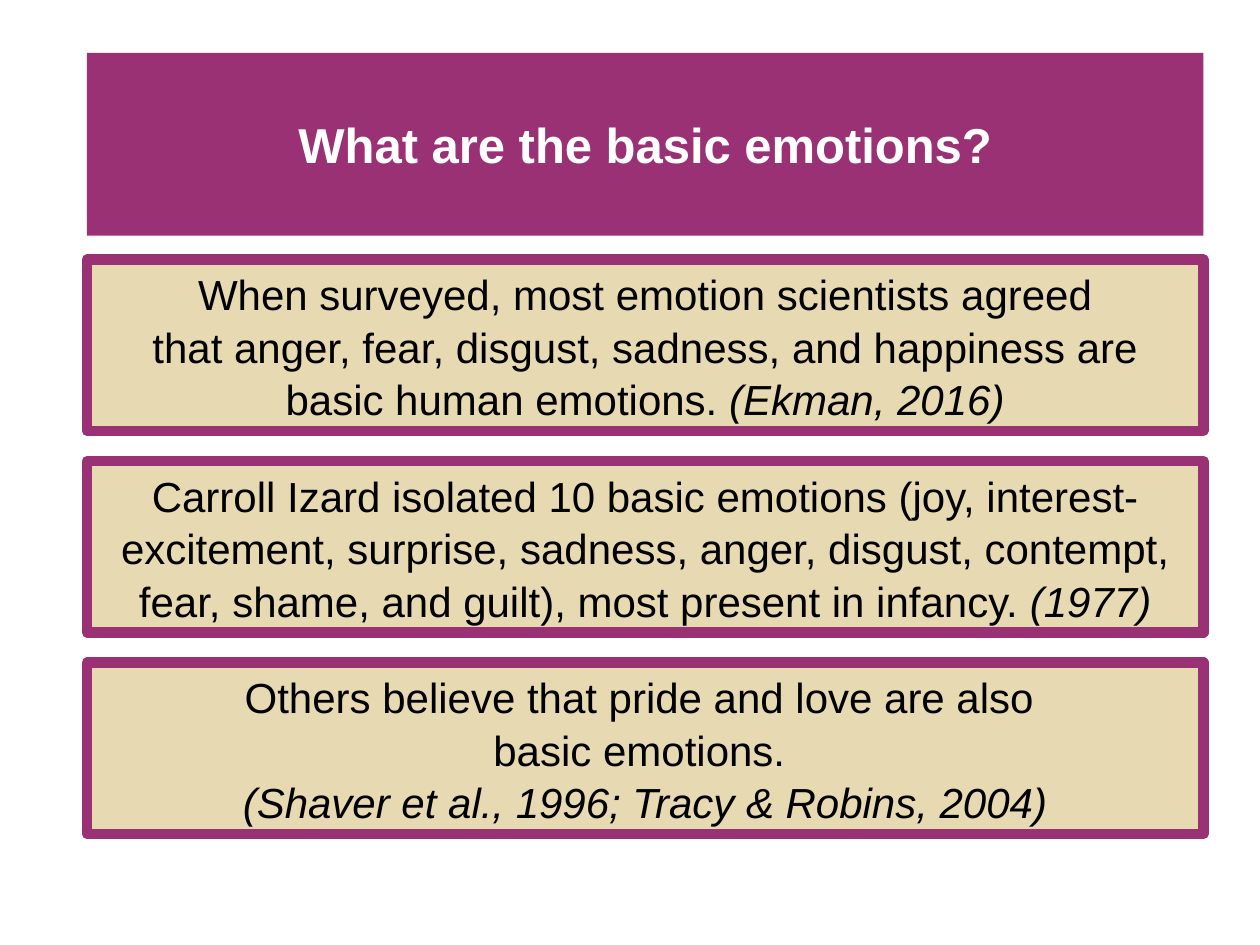
from dataclasses import dataclass

import pptx
import pptx.dml.color
import pptx.enum.text
import pptx.oxml.ns
import pptx.util

PURPLE = pptx.dml.color.RGBColor(0x9B, 0x31, 0x75)
SAND = pptx.dml.color.RGBColor(0xE7, 0xD9, 0xB1)
BLACK = pptx.dml.color.RGBColor(0, 0, 0)
WHITE = pptx.dml.color.RGBColor(0xFF, 0xFF, 0xFF)

FONT = "Arial"
COMPARISON_LAYOUT = 4
LEFT, WIDTH = 0.69, 8.86
TITLE_TOP, TITLE_HEIGHT = 0.42, 1.45
PANEL_TOP, PANEL_HEIGHT, PANEL_PITCH = 2.06, 1.36, 1.6


@dataclass(frozen=True)
class Run:
    text: str
    italic: bool = False


Panel = list[list[Run]]

PANELS: list[Panel] = [
    [
        [Run("When surveyed, most emotion scientists agreed")],
        [
            Run("that anger, fear, disgust, sadness, and happiness are basic human emotions. "),
            Run("(Ekman, 2016)", italic=True),
        ],
    ],
    [
        [
            Run(
                "Carroll Izard isolated 10 basic emotions (joy, interest-excitement, surprise, "
                "sadness, anger, disgust, contempt, fear, shame, and guilt), "
                "most present in infancy. "
            ),
            Run("(1977)", italic=True),
        ],
    ],
    [
        [Run("Others believe that pride and love are also ")],
        [Run("basic emotions. ")],
        [Run("(Shaver et al., 1996; Tracy & Robins, 2004)", italic=True)],
    ],
]


def place(shape, top: float, height: float, color: pptx.dml.color.RGBColor) -> None:
    shape.left, shape.top, shape.width, shape.height = map(
        pptx.util.Inches, (LEFT, top, WIDTH, height)
    )
    shape.fill.solid()
    shape.fill.fore_color.rgb = color


def write(
    shape,
    paragraphs: Panel,
    size: int,
    color: pptx.dml.color.RGBColor,
    bold: bool = False,
    line_spacing: float = 1.0,
) -> None:
    """Fill a placeholder with centred text, free of bullets and indents."""
    frame = shape.text_frame
    frame.word_wrap = True
    frame.auto_size = pptx.enum.text.MSO_AUTO_SIZE.NONE
    frame.vertical_anchor = pptx.enum.text.MSO_ANCHOR.MIDDLE
    for index, runs in enumerate(paragraphs):
        paragraph = frame.add_paragraph() if index else frame.paragraphs[0]
        paragraph.alignment = pptx.enum.text.PP_ALIGN.CENTER
        paragraph.space_before = pptx.util.Pt(0)
        paragraph.line_spacing = line_spacing
        properties = paragraph._p.get_or_add_pPr()
        properties.set("marL", "0")
        properties.set("indent", "0")
        properties.append(pptx.oxml.parse_xml(f"<a:buNone {pptx.oxml.ns.nsdecls('a')}/>"))
        for item in runs:
            run = paragraph.add_run()
            run.text = item.text
            run.font.name = FONT
            run.font.size = pptx.util.Pt(size)
            run.font.bold = bold
            run.font.italic = item.italic
            run.font.color.rgb = color


def main() -> None:
    presentation = pptx.Presentation()
    presentation.slide_width = pptx.util.Inches(10)
    presentation.slide_height = pptx.util.Inches(7.5)
    slide = presentation.slides.add_slide(presentation.slide_layouts[COMPARISON_LAYOUT])

    title, *bodies = slide.placeholders
    place(title, TITLE_TOP, TITLE_HEIGHT, PURPLE)
    write(title, [[Run("What are the basic emotions?")]], 28, WHITE, bold=True)

    for row, (body, panel) in enumerate(zip(bodies, PANELS)):
        place(body, PANEL_TOP + row * PANEL_PITCH, PANEL_HEIGHT, SAND)
        body.line.color.rgb = PURPLE
        body.line.width = pptx.util.Pt(6)
        write(body, panel, 24, BLACK, line_spacing=1.04)

    for unused in bodies[len(PANELS):]:
        unused.element.getparent().remove(unused.element)

    presentation.save("out.pptx")


if __name__ == "__main__":
    main()
